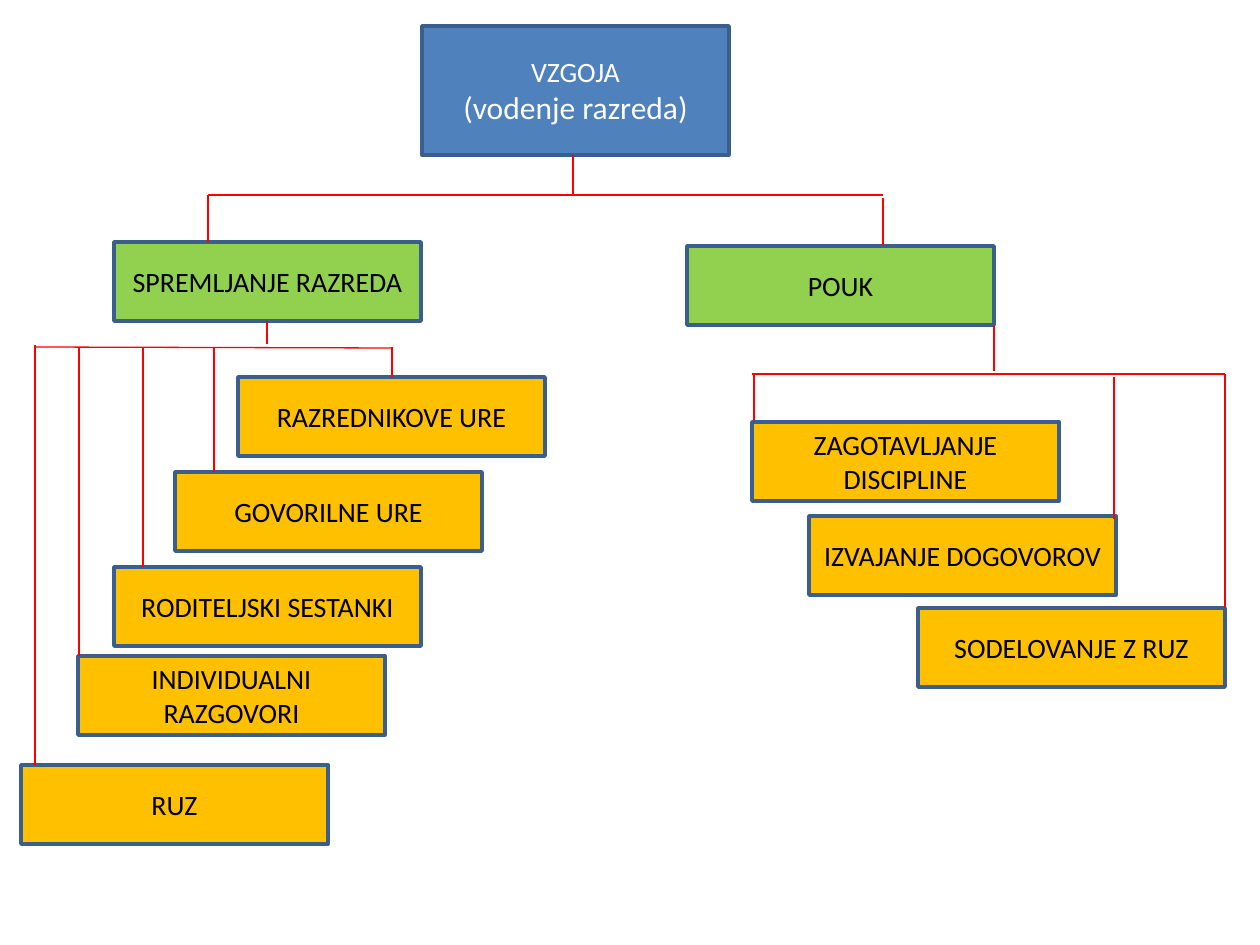
from lxml.etree import SubElement
from pptx import Presentation
from pptx.dml.color import RGBColor
from pptx.enum.shapes import MSO_CONNECTOR, MSO_SHAPE
from pptx.enum.text import MSO_ANCHOR, PP_ALIGN
from pptx.oxml.ns import qn
from pptx.util import Pt

SCALE = 914400 / 126
WIDE, HIGH = 307, 79

BLUE = RGBColor(0x4F, 0x81, 0xBD)
EDGE = RGBColor(0x3A, 0x5F, 0x8C)
GREEN = RGBColor(0x92, 0xD0, 0x50)
GOLD = RGBColor(0xFF, 0xC0, 0x00)
RED = RGBColor(0xFF, 0x00, 0x00)
WHITE = RGBColor(0xFF, 0xFF, 0xFF)
BLACK = RGBColor(0x00, 0x00, 0x00)

TOPICS = [
    ("SPREMLJANJE RAZREDA", 114, 242),
    ("POUK", 687, 246),
]
TASKS = [
    ("RAZREDNIKOVE URE", 238, 377),
    ("GOVORILNE URE", 175, 472),
    ("RODITELJSKI SESTANKI", 114, 567),
    ("INDIVIDUALNI RAZGOVORI", 78, 656),
    ("RUZ", 21, 765),
    ("ZAGOTAVLJANJE DISCIPLINE", 752, 422),
    ("IZVAJANJE DOGOVOROV", 809, 516),
    ("SODELOVANJE Z RUZ", 918, 608),
]
# Each bar: left, right, left height, right height
BARS = [
    (208, 883, 195, 195),
    (752, 1225, 374, 374),
    (35, 392, 347, 348),
]
# Each drop: x, top, bottom
DROPS = [
    (208, 195, 242), (883, 198, 245), (573, 155, 195),
    (994, 325, 371), (754, 374, 420), (1114, 377, 519), (1225, 374, 608),
    (267, 321, 344), (392, 347, 377), (214, 348, 472), (143, 348, 567),
    (79, 347, 656), (35, 345, 765),
]


def px(num):
    return round(num * SCALE)


def add_box(slide, lines, left, top, fill, color=BLACK, high=HIGH):
    """Add a bordered box; lines holds (text, point size) pairs."""
    box = slide.shapes.add_shape(
        MSO_SHAPE.RECTANGLE, px(left), px(top), px(WIDE), px(high))
    box.shadow.inherit = False
    box.fill.solid()
    box.fill.fore_color.rgb = fill
    box.line.color.rgb = EDGE
    box.line.width = Pt(2)
    frame = box.text_frame
    frame.word_wrap = True
    frame.vertical_anchor = MSO_ANCHOR.MIDDLE
    frame.text = "\n".join(text for text, size in lines)
    for para, (text, size) in zip(frame.paragraphs, lines):
        para.alignment = PP_ALIGN.CENTER
        para.font.name = "Calibri"
        para.font.size = Pt(size)
        para.font.color.rgb = color


def add_line(slide, x1, y1, x2, y2):
    line = slide.shapes.add_connector(
        MSO_CONNECTOR.STRAIGHT, px(x1), px(y1), px(x2), px(y2))
    line.line.color.rgb = RED
    line.line.width = Pt(0.75)
    SubElement(line._element.spPr, qn("a:effectLst"))


def main():
    deck = Presentation()
    deck.slide_width, deck.slide_height = px(1260), px(945)
    slide = deck.slides.add_slide(deck.slide_layouts[6])
    title = [("VZGOJA", 16), ("(vodenje razreda)", 18)]
    add_box(slide, title, 422, 26, BLUE, WHITE, 129)
    for group, fill in ((TOPICS, GREEN), (TASKS, GOLD)):
        for text, left, top in group:
            add_box(slide, [(text, 16)], left, top, fill)
    for left, right, start, end in BARS:
        add_line(slide, left, start, right, end)
    for x, top, bottom in DROPS:
        add_line(slide, x, top, x, bottom)
    deck.save("out.pptx")


if __name__ == "__main__":
    main()
